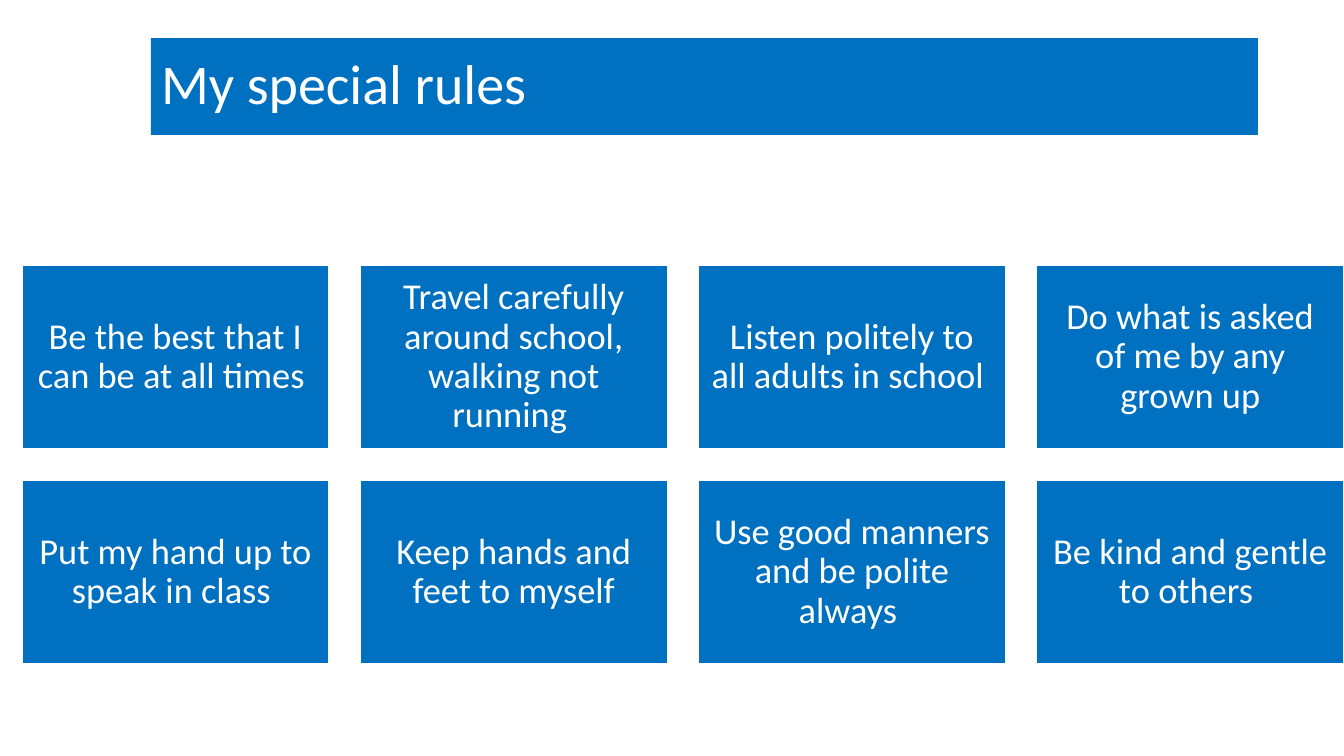
from pptx import Presentation
from pptx.dml.color import RGBColor
from pptx.enum.shapes import MSO_SHAPE
from pptx.enum.text import MSO_ANCHOR, MSO_AUTO_SIZE, PP_ALIGN
from pptx.util import Pt

RECT = MSO_SHAPE.RECTANGLE
MIDDLE = MSO_ANCHOR.MIDDLE
NO_FIT = MSO_AUTO_SIZE.NONE
LEFT, CENTER = PP_ALIGN.LEFT, PP_ALIGN.CENTER
PX = 914400 / 100.8
COLORS = {"blue": "0070C0", "white": "FFFFFF"}
TITLE = "My special rules"
RULES = [
    "Be the best that I can be at all times ",
    "Travel carefully around school, walking not running ",
    "Listen politely to all adults in school ",
    "Do what is asked of me by any grown up",
    "Put my hand up to speak in class ",
    "Keep hands and feet to myself",
    "Use good manners and be polite always ",
    "Be kind and gentle to others ",
]


def px(n):
    """Turn pixels into EMU."""
    return round(n * PX)


def color(name):
    """Look up a named colour."""
    return RGBColor.from_string(COLORS[name])


def apply(obj, values):
    """Set attributes from a dict of format values."""
    for name, value in values.items():
        setattr(obj, name, value)


def write(sp, text, size, align, margin):
    """Fill a shape with blue and put one white paragraph in it."""
    sp.fill.solid()
    sp.fill.fore_color.rgb = color("blue")
    tf = sp.text_frame
    apply(tf, {"word_wrap": True, "auto_size": NO_FIT, "vertical_anchor": MIDDLE})
    apply(tf, {f"margin_{side}": px(margin) for side in ("left", "top", "right", "bottom")})
    p = tf.paragraphs[0]
    apply(p, {"alignment": align, "line_spacing": 0.9})
    r = p.add_run()
    r.text = text
    apply(r.font, {"name": "Calibri", "size": Pt(size), "bold": False})
    r.font.color.rgb = color("white")


def add_title(s, left, top, width, height):
    """Place the title bar."""
    sp = s.shapes.title
    apply(sp, {"left": px(left), "top": px(top), "width": px(width), "height": px(height)})
    write(sp, TITLE, 40, LEFT, 10)


def add_rules(s, left, top, width, height, columns=4, rows=2, gap=31):
    """Lay the rule cards out on an even grid within the box."""
    card_w = (width - gap * (columns - 1)) / columns
    card_h = (height - gap * (rows - 1)) / rows
    for i, rule in enumerate(RULES):
        row, column = divmod(i, columns)
        x = left + column * (card_w + gap)
        y = top + row * (card_h + gap)
        sp = s.shapes.add_shape(RECT, px(x), px(y), px(card_w), px(card_h))
        sp.shadow.inherit = False
        sp.line.color.rgb = color("white")
        sp.line.width = Pt(1)
        write(sp, rule, 26, CENTER, 11)


def main():
    """Build and save the slide."""
    prs = Presentation()
    prs.slide_width, prs.slide_height = px(1344), px(756)
    s = prs.slides.add_slide(prs.slide_layouts[5])
    add_title(s, 151, 38, 1107, 97)
    add_rules(s, 22, 265, 1322, 399)
    prs.save("out.pptx")


if __name__ == "__main__":
    main()
